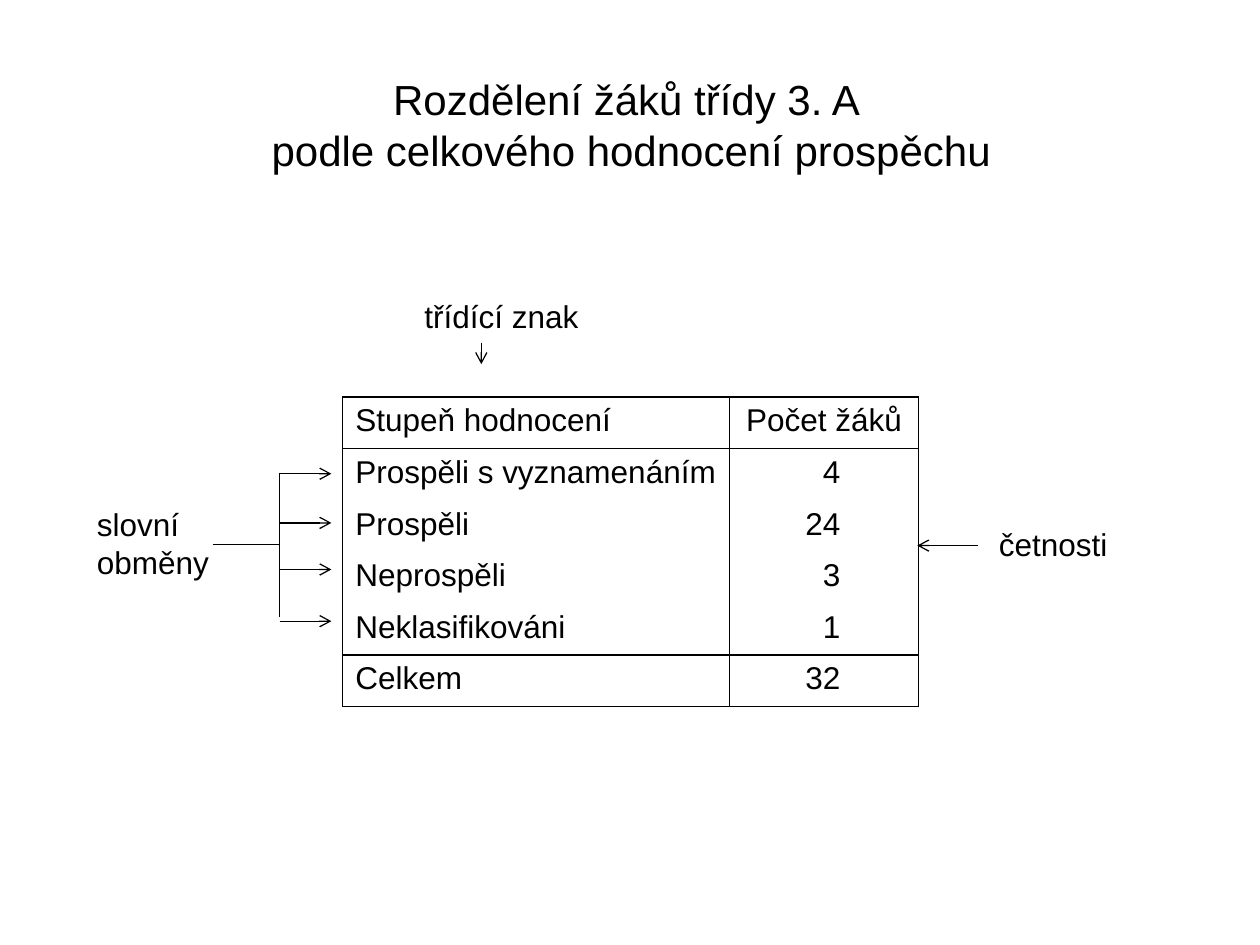
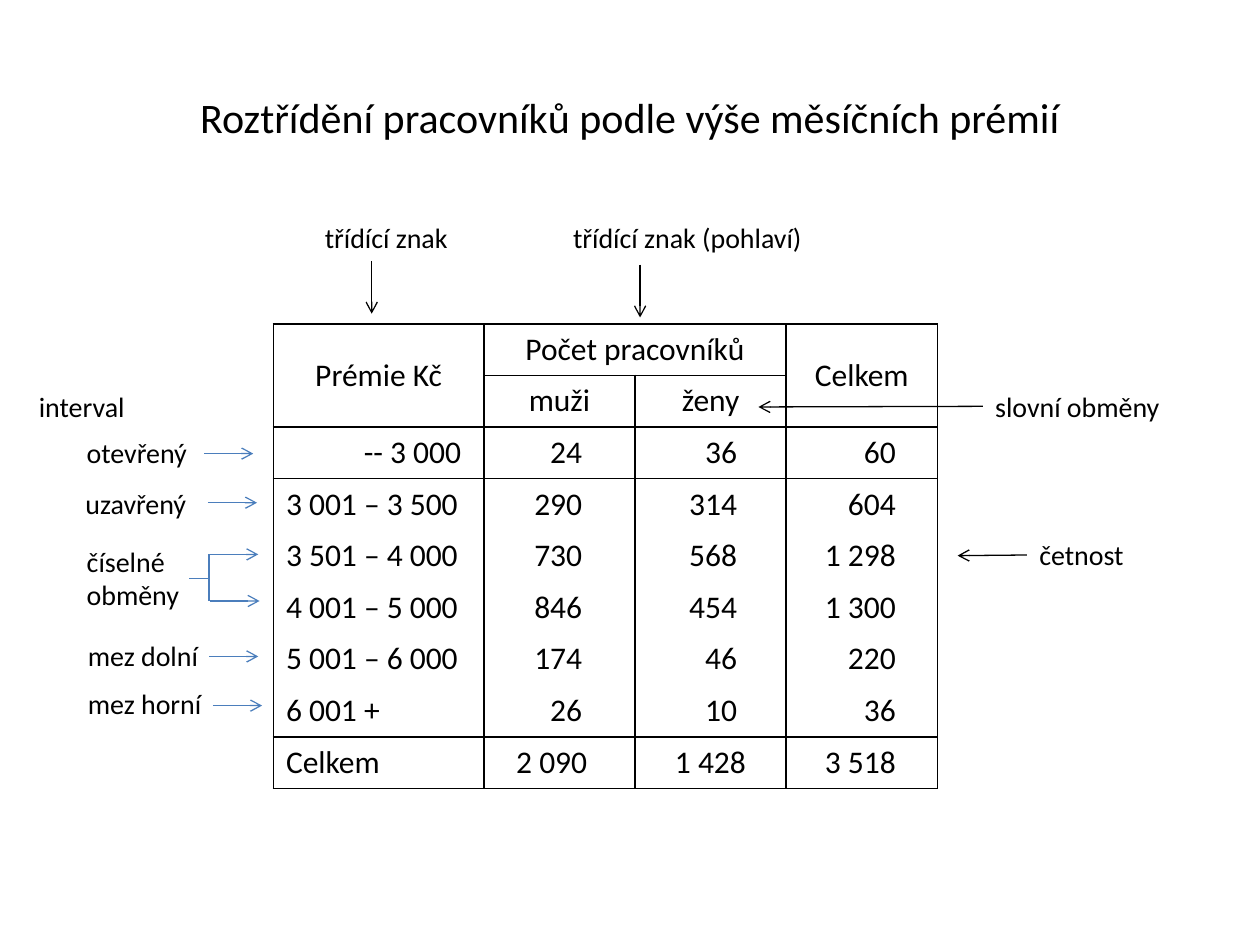
import pptx
import pptx.util
import pptx.dml.color
import pptx.enum.shapes
import pptx.enum.text
import pptx.oxml.ns
from lxml import etree

Inches, Pt = pptx.util.Inches, pptx.util.Pt
ALIGN = pptx.enum.text.PP_ALIGN
ANCHOR = pptx.enum.text.MSO_ANCHOR

COLORS = {"ink": "000000", "blue": "4B7EBC"}
ROW_HEIGHT = 0.41
CELL_MARGIN = 0.1

# Labels: text, left, top, width, height.
# Arrows and plain lines: colour, start x, start y, end x, end y.
# "joined" arrows leave the left side of the label with that text.
# "rules" are the row edges with a line; "number_margins" hold one value per number column.
SLIDES = [
    {
        "font": "Arial",
        "label_size": 18,
        "title": ("Rozdělení žáků třídy 3. A \vpodle celkového hodnocení prospěchu", 0.51, 0.36),
        "table": {
            "at": (2.72, 3.15),
            "columns": [3.07, 1.5],
            "rows": [
                ["Stupeň hodnocení", "Počet žáků"],
                ["Prospěli s vyznamenáním", "4"],
                ["Prospěli", "24"],
                ["Neprospěli", "3"],
                ["Neklasifikováni", "1"],
                ["Celkem", "32"],
            ],
            "header_rows": 1,
            "centered_headers": [1],
            "merges": [],
            "rules": {0, 1, 5, 6},
            "number_margins": [0.62],
            "total_margins": [0.62],
            "right_cells": {},
        },
        "labels": [
            ("četnosti", 7.83, 4.12, 1.5, 0.4),
            ("třídící znak", 3.27, 2.31, 2.13, 0.4),
            ("slovní obměny", 0.67, 3.96, 1.21, 0.71),
        ],
        "joined": [],
        "arrows": [
            ("ink", 7.76, 4.33, 7.28, 4.33),
            ("ink", 3.82, 2.72, 3.82, 2.89),
            *[("ink", 2.22, y, 2.63, y) for y in (3.76, 4.15, 4.52, 4.93)],
        ],
        "lines": [("ink", 2.22, 3.75, 2.22, 4.9), ("ink", 1.69, 4.32, 2.22, 4.32)],
    },
    {
        "font": "Calibri",
        "label_size": 16,
        "title": ("Roztřídění pracovníků podle výše měsíčních prémií", 0.5, 0.3),
        "table": {
            "at": (2.17, 2.57),
            "columns": [1.67, 1.2, 1.2, 1.2],
            "rows": [
                ["Prémie Kč", "Počet pracovníků", "", "Celkem"],
                ["", "muži", "ženy", ""],
                ["-- 3 000", "24", "36", "60"],
                ["3 001 – 3 500", "290", "314", "604"],
                ["3 501 – 4 000", "730", "568", "1 298"],
                ["4 001 – 5 000", "846", "454", "1 300"],
                ["5 001 – 6 000", "174", "46", "220"],
                ["6 001 +", "26", "10", "36"],
                ["Celkem", "2 090", "1 428", "3 518"],
            ],
            "header_rows": 2,
            "centered_headers": [0, 1, 2, 3],
            "merges": [((0, 0), (1, 0)), ((0, 1), (0, 2)), ((0, 3), (1, 3))],
            "rules": {0, 1, 2, 3, 8, 9},
            "number_margins": [0.42, 0.39, 0.33],
            "total_margins": [0.38, 0.32, 0.33],
            "right_cells": {(2, 0): 0.18},
        },
        "labels": [
            ("třídící znak", 2.48, 1.7, 1.26, 0.37),
            ("slovní obměny", 7.8, 3.04, 1.73, 0.37),
            ("otevřený", 0.59, 3.41, 1.26, 0.37),
            ("třídící znak (pohlaví)", 4.45, 1.7, 2.28, 0.37),
            ("interval", 0.21, 3.04, 1.02, 0.37),
            ("mez horní", 0.6, 5.4, 1.26, 0.37),
            ("četnost", 8.15, 4.22, 1.02, 0.37),
            ("uzavřený", 0.58, 3.81, 1.04, 0.37),
            ("číselné obměny", 0.59, 4.27, 1.26, 0.64),
            ("mez dolní", 0.6, 5.02, 1.26, 0.37),
        ],
        "joined": [("slovní obměny", 6.02, 3.23), ("četnost", 7.6, 4.41)],
        "arrows": [
            ("ink", 2.95, 2.07, 2.95, 2.49),
            ("ink", 5.08, 2.1, 5.08, 2.52),
            *[("blue", x, y, x + 0.39, y) for x, y in (
                (1.62, 3.6), (1.65, 3.99), (1.66, 4.4), (1.67, 4.77), (1.66, 5.21), (1.69, 5.6))],
        ],
        "lines": [("blue", 1.66, 4.4, 1.66, 4.77), ("blue", 1.5, 4.59, 1.66, 4.59)],
    },
]


def rgb(name):
    return pptx.dml.color.RGBColor.from_string(COLORS[name])


def style_text(frame, font, size, align):
    for para in frame.paragraphs:
        para.alignment = align
        para.font.name = font
        para.font.size = Pt(size)
        para.font.color.rgb = rgb("ink")


def add_text(page, text, bounds, font, size, align=ALIGN.LEFT, anchor=ANCHOR.TOP):
    box = page.shapes.add_textbox(*map(Inches, bounds))
    frame = box.text_frame
    frame.word_wrap = True
    frame.vertical_anchor = anchor
    frame.text = text
    style_text(frame, font, size, align)
    return box


def add_line(page, color, x1, y1, x2, y2, arrow=False):
    line = page.shapes.add_connector(
        pptx.enum.shapes.MSO_CONNECTOR.STRAIGHT, *map(Inches, (x1, y1, x2, y2)))
    line.line.color.rgb = rgb(color)
    line.line.width = Pt(0.75)
    qn = pptx.oxml.ns.qn
    if arrow:
        etree.SubElement(line.line._get_or_add_ln(), qn("a:tailEnd"), type="arrow")
    etree.SubElement(line._element.spPr, qn("a:effectLst"))
    return line


def set_borders(cell, top, bottom):
    """Draw both side borders, and the top and bottom ones where asked."""
    qn = pptx.oxml.ns.qn
    properties = cell._tc.get_or_add_tcPr()
    edges = (("L", True), ("R", True), ("T", top), ("B", bottom))
    for position, (side, drawn) in enumerate(edges):
        border = etree.Element(qn(f"a:ln{side}"), w=str(Pt(1)))
        if drawn:
            fill = etree.SubElement(border, qn("a:solidFill"))
            etree.SubElement(fill, qn("a:srgbClr"), val=COLORS["ink"])
        else:
            etree.SubElement(border, qn("a:noFill"))
        properties.insert(position, border)


def add_grid(page, data, font):
    rows, widths = data["rows"], data["columns"]
    left, top = data["at"]
    table = page.shapes.add_table(
        len(rows), len(widths), Inches(left), Inches(top),
        Inches(sum(widths)), Inches(ROW_HEIGHT * len(rows))).table
    table.first_row = table.horz_banding = False
    for column, width in zip(table.columns, widths):
        column.width = Inches(width)
    for first, last in data["merges"]:
        table.cell(*first).merge(table.cell(*last))

    for r, values in enumerate(rows):
        table.rows[r].height = Inches(ROW_HEIGHT)
        margins = data["total_margins" if r == len(rows) - 1 else "number_margins"]
        for c, value in enumerate(values):
            cell = table.cell(r, c)
            cell.fill.background()
            set_borders(cell, r in data["rules"], r + 1 in data["rules"])
            align, margin = ALIGN.LEFT, CELL_MARGIN
            if r < data["header_rows"]:
                if c in data["centered_headers"]:
                    align = ALIGN.CENTER
                if cell.is_merge_origin and cell.span_height > 1:
                    cell.vertical_anchor = ANCHOR.MIDDLE
            elif c > 0:
                align, margin = ALIGN.RIGHT, margins[c - 1]
            elif (r, c) in data["right_cells"]:
                align, margin = ALIGN.RIGHT, data["right_cells"][r, c]
            cell.margin_right = Inches(margin)
            if not cell.is_spanned:
                cell.text = value
            style_text(cell.text_frame, font, 18, align)


def build_page(deck, content):
    page = deck.slides.add_slide(deck.slide_layouts[6])
    font = content["font"]
    title, left, top = content["title"]
    add_text(page, title, (left, top, 9, 1.25), font, 24, ALIGN.CENTER, ANCHOR.MIDDLE)
    add_grid(page, content["table"], font)
    labels = {}
    for text, *bounds in content["labels"]:
        labels[text] = add_text(page, text, bounds, font, content["label_size"])
        labels[text].text_frame.auto_size = pptx.enum.text.MSO_AUTO_SIZE.SHAPE_TO_FIT_TEXT
    for text, x, y in content["joined"]:
        arrow = add_line(page, "ink", x, y, x, y, arrow=True)
        arrow.begin_connect(labels[text], 1)
    for ends in content["arrows"]:
        add_line(page, *ends, arrow=True)
    for ends in content["lines"]:
        add_line(page, *ends)


def main():
    deck = pptx.Presentation()
    deck.slide_width, deck.slide_height = Inches(10), Inches(7.5)
    for content in SLIDES:
        build_page(deck, content)
    deck.save("out.pptx")


if __name__ == "__main__":
    main()
